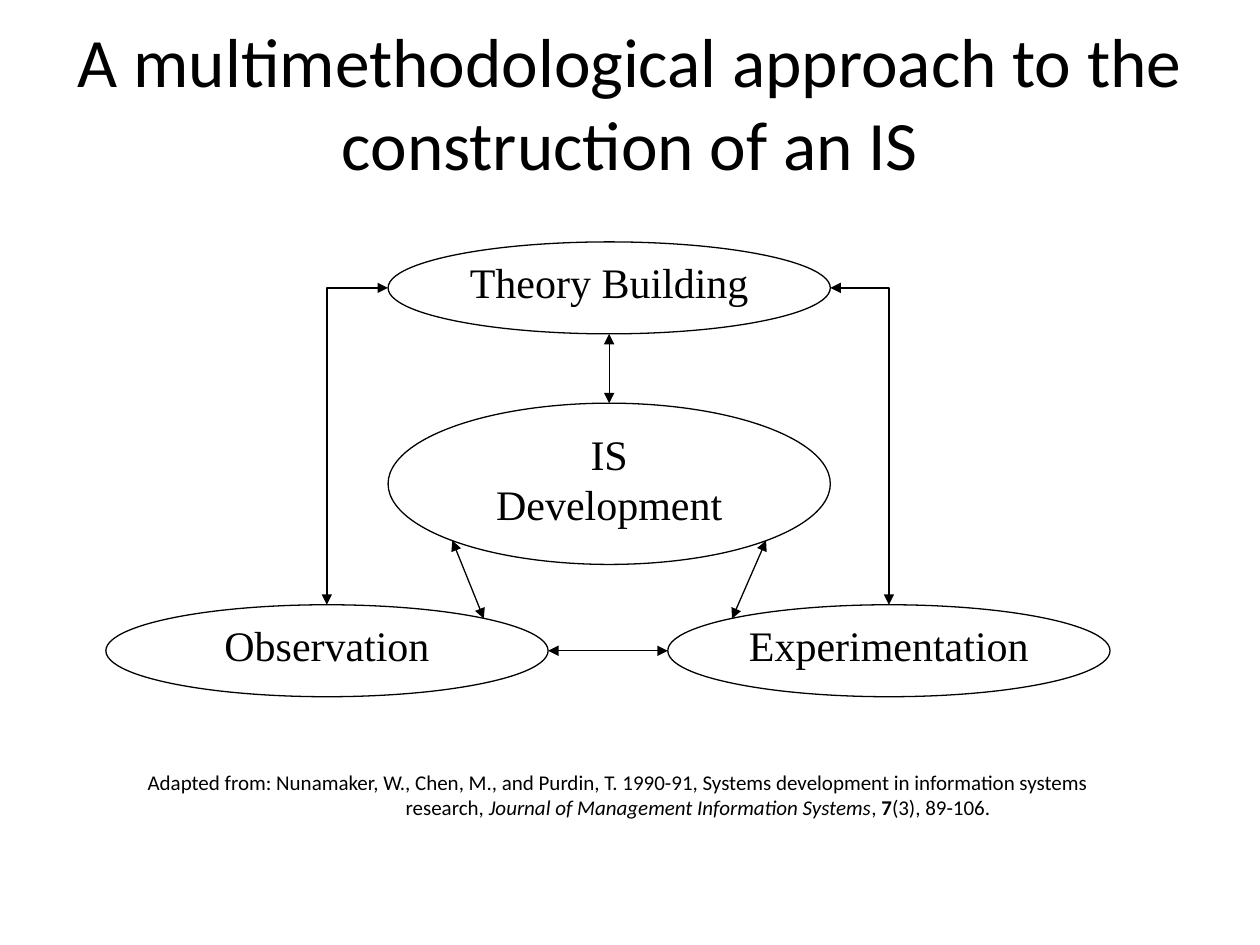
from pptx import Presentation
from pptx.dml.color import RGBColor
from pptx.enum.shapes import MSO_CONNECTOR as LINK, MSO_SHAPE as SHAPE
from pptx.enum.text import MSO_ANCHOR as ANCHOR, PP_ALIGN as ALIGN
from pptx.oxml.ns import qn
from pptx.util import Inches, Pt
from lxml.etree import SubElement as Sub

BLACK = RGBColor(0, 0, 0)
WHITE = RGBColor(255, 255, 255)

# Grid of 100 columns by 75 rows
UNIT = Inches(0.1)
deck = Presentation()
deck.slide_width, deck.slide_height = 100 * UNIT, 75 * UNIT
slide = deck.slides.add_slide(deck.slide_layouts[6])
shapes = slide.shapes


def grid(*cells):
    return [round(cell * UNIT) for cell in cells]


def write(shape, lines, size, font="Calibri", anchor=ANCHOR.TOP, pad=None):
    """Each line is a list of (text, style) runs; style is "", "b" or "i"."""
    frame = shape.text_frame
    frame.word_wrap = True
    frame.vertical_anchor = anchor
    if pad:
        frame.margin_left = frame.margin_right = Inches(pad[0])
        frame.margin_top = frame.margin_bottom = Inches(pad[1])
    for row, runs in enumerate(lines):
        para = frame.add_paragraph() if row else frame.paragraphs[0]
        para.alignment = ALIGN.CENTER
        for text, style in runs:
            run = para.add_run()
            run.text = text
            run.font.name, run.font.size = font, Pt(size)
            run.font.color.rgb = BLACK
            run.font.bold, run.font.italic = style == "b", style == "i"


# Title
title = shapes.add_textbox(*grid(5, 2.9, 90, 10.2))
write(title, [[("A multimethodological approach to the construction of an IS", "")]],
      39.6, anchor=ANCHOR.MIDDLE)

# Ellipses: the side pair sits evenly about its own axis
WIDE, LOW, TALL = 35.1, 7.3, 12.8
MID, LEFT, RIGHT = 30.8, 8.4, 53
TOP, CORE, BASE = 19.2, 32, 48
for x, y, high, words in [
    (MID, CORE, TALL, ["IS", "Development"]),
    (RIGHT, BASE, LOW, ["Experimentation"]),
    (MID, TOP, LOW, ["Theory Building"]),
    (LEFT, BASE, LOW, ["Observation"]),
]:
    oval = shapes.add_shape(SHAPE.OVAL, *grid(x, y, WIDE, high))
    oval.shadow.inherit = False
    oval.fill.solid()
    oval.fill.fore_color.rgb = WHITE
    oval.line.color.rgb = BLACK
    oval.line.width = Pt(0.75)
    write(oval, [[(word, "")] for word in words], 24, "Times New Roman",
          pad=(0.02, 0.01))

# Two-headed arrows
half, mid_y, base_y = WIDE / 2, TOP + LOW / 2, BASE + LOW / 2
for kind, *ends in [
    (LINK.ELBOW, MID, mid_y, LEFT + half, BASE),
    (LINK.ELBOW, MID + WIDE, mid_y, RIGHT + half, BASE),
    (LINK.STRAIGHT, LEFT + WIDE, base_y, RIGHT, base_y),
    (LINK.STRAIGHT, MID + half, TOP + LOW, MID + half, CORE),
    (LINK.STRAIGHT, 38.4, 49.1, 35.9, 42.9),
    (LINK.STRAIGHT, 60.8, 42.9, 58.1, 49.1),
]:
    arrow = shapes.add_connector(kind, *grid(*ends))
    arrow.line.color.rgb = BLACK
    arrow.line.width = Pt(0.75)
    props = arrow.element.spPr
    if kind == LINK.ELBOW:
        props.find(qn("a:prstGeom")).set("prst", "bentConnector2")
    for tip in ("a:headEnd", "a:tailEnd"):
        Sub(props.find(qn("a:ln")), qn(tip), type="triangle")
    Sub(props, qn("a:effectLst"))

# Reference with a hanging indent
note = shapes.add_textbox(*grid(9.9, 60.6, 78.3, 5.1))
write(note, [[
    ("Adapted from: Nunamaker, W., Chen, M., and Purdin, T. 1990-91, "
     "Systems development in information systems research, ", ""),
    ("Journal of Management Information Systems", "i"),
    (", ", ""), ("7", "b"), ("(3), 89-106.", ""),
]], 12)
hang = note.text_frame.paragraphs[0]._p.get_or_add_pPr()
hang.set("marL", str(Inches(1.27)))
hang.set("indent", str(-Inches(1.27)))

deck.save("out.pptx")
